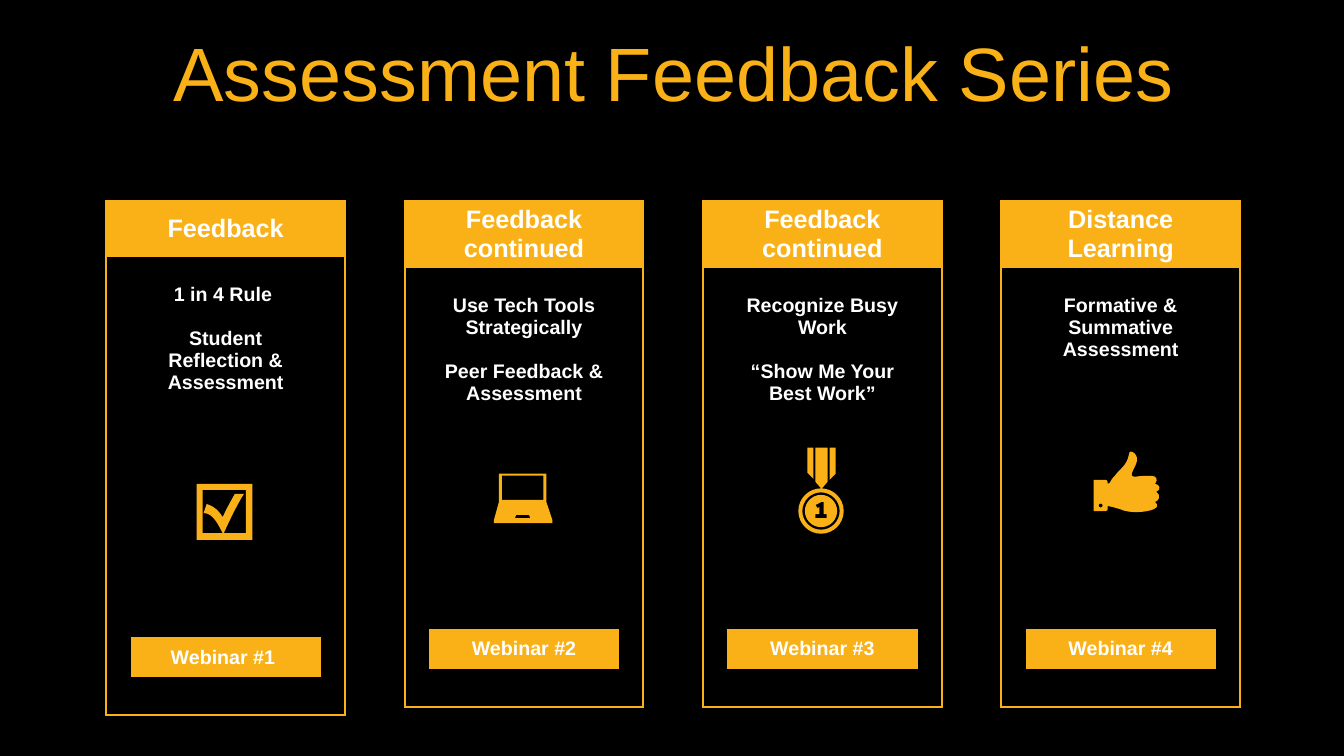
"""Build the Assessment Feedback Series slide with four webinar cards."""
from lxml import etree
from pptx import Presentation
from pptx.dml.color import RGBColor
from pptx.enum.text import MSO_ANCHOR, PP_ALIGN
from pptx.oxml.ns import qn
from pptx.util import Pt

CENTER = PP_ALIGN.CENTER
TOP, MIDDLE = MSO_ANCHOR.TOP, MSO_ANCHOR.MIDDLE

COLORS = {"back": "000000", "gold": "FAB117", "text": "FFFFFF"}
FONT = "Arial"
TITLE = "Assessment Feedback Series"


def circle(cx, cy, r):
    """Return a circle as a start point and four curves."""
    k = 0.55 * r
    return [(cx, cy - r),
            (cx + k, cy - r, cx + r, cy - k, cx + r, cy),
            (cx + r, cy + k, cx + k, cy + r, cx, cy + r),
            (cx - k, cy + r, cx - r, cy + k, cx - r, cy),
            (cx - r, cy - k, cx - k, cy - r, cx, cy - r)]


# Outlines in hundredths of an inch: pairs are lines, sextuples are curves.
CHECKBOX = [
    [(6, 6), (6, 49), (26, 49), (22, 42, 17, 29, 7, 29), (10, 20),
     (19, 23, 22, 27, 26, 33), (30, 24, 33, 19, 38, 10), (47, 10),
     (40, 21, 33, 36, 27, 49), (49, 49), (49, 6)],
    [(0, 0), (55.5, 0), (55.5, 55.5), (0, 55.5)],
]
LAPTOP = [
    [(22, 41), (21, 44), (36, 44), (35, 41)],
    [(8, 2), (8, 26), (49, 26), (49, 2)],
    [(5, 0), (52, 0), (52, 28), (58, 46), (58, 49), (0, 49), (0, 46), (5, 28)],
]
MEDAL = [
    [(25, 54), (23, 54), (17, 57), (19, 60), (21, 59), (21, 66), (17, 66),
     (17, 70), (28, 70), (28, 66), (25, 66)],
    circle(22.5, 63, 16), circle(22.5, 63, 18.5), circle(22.5, 63, 22.5),
    [(31, 0), (37, 0), (37, 26), (31, 32)],
    [(17, 0), (29, 0), (29, 34), (23, 41), (17, 34)],
    [(9, 0), (15, 0), (15, 31), (9, 25)],
]
THUMB = [
    circle(7, 53.5, 2),
    [(37, 0), (39, 0, 42, 2, 43, 6), (45, 13, 32, 25, 41, 25),
     (47, 24, 51, 24, 57, 24), (63, 24, 64, 28, 61, 32),
     (65, 32, 68, 38, 62, 40), (68, 44, 64, 49, 61, 50),
     (64, 53, 64, 55, 60, 57), (54, 60, 36, 62, 26, 57),
     (21, 56, 18, 54, 14, 54), (14, 57), (14, 58, 13, 59, 12, 59), (0, 59),
     (0, 28), (12, 28), (13, 28, 14, 29, 14, 31), (14, 32),
     (15, 32, 15, 32, 16, 31), (17, 29, 18, 27, 21, 24),
     (26, 17, 33, 14, 35, 3), (35, 1, 36, 0, 37, 0)],
]

FIRST_ROWS = (40, 102, 60, 83, 27, 28.6, 27)
OTHER_ROWS = (48, 101.5, 60, 69.6, 27, 28.6, 27)
CARDS = [
    ("Feedback", ["1 in 4 Rule ", "Student Reflection & Assessment"],
     "Webinar #1 ", FIRST_ROWS, CHECKBOX, (140.4, 345.6)),
    ("Feedback continued",
     ["Use Tech Tools Strategically", "Peer Feedback & Assessment"],
     "Webinar #2", OTHER_ROWS, LAPTOP, (352.8, 338.4)),
    ("Feedback continued",
     ["Recognize Busy Work", "“Show Me Your Best Work”"],
     "Webinar #3", OTHER_ROWS, MEDAL, (570.24, 319.7)),
    ("Distance Learning", ["Formative & Summative Assessment"],
     "Webinar #4", OTHER_ROWS, THUMB, (781.2, 322.6)),
]
COLUMNS = (17.2, 136, 17.2)
CARD_LEFT, CARD_TOP, CARD_PITCH = 76, 143.3, 213.1
HEADER_ROW, BODY_ROW, WEBINAR_ROW = 0, 1, 5
LINE_GAP = 16


def rgb(name):
    return RGBColor.from_string(COLORS[name])


def set_borders(cell, sides):
    tcPr = cell._tc.get_or_add_tcPr()
    for i, side in enumerate("LRTB"):
        ln = etree.Element(qn(f"a:ln{side}"), w=str(Pt(1.5)))
        if side in sides:
            fill = etree.SubElement(ln, qn("a:solidFill"))
            etree.SubElement(fill, qn("a:srgbClr"), val=COLORS["gold"])
        else:
            etree.SubElement(ln, qn("a:noFill"))
        tcPr.insert(i, ln)


def write_cell(cell, lines, size, anchor=MIDDLE):
    cell.vertical_anchor = anchor
    tf = cell.text_frame
    tf.text = "\n".join(lines)
    for i, p in enumerate(tf.paragraphs):
        p.alignment = CENTER
        p.font.size, p.font.bold, p.font.name = Pt(size), True, FONT
        p.font.color.rgb = rgb("text")
        if i:
            p.space_before = Pt(LINE_GAP)


def add_card(s, left, heading, topics, label, heights):
    last_row, last_col = len(heights) - 1, len(COLUMNS) - 1
    table = s.shapes.add_table(
        len(heights), len(COLUMNS), Pt(left), Pt(CARD_TOP),
        Pt(sum(COLUMNS)), Pt(sum(heights))).table
    table.first_row = table.horz_banding = False
    for column, width in zip(table.columns, COLUMNS):
        column.width = Pt(width)
    texts = {HEADER_ROW: ([heading], 18), BODY_ROW: (topics, 14, TOP),
             WEBINAR_ROW: ([label], 14)}
    for r, height in enumerate(heights):
        table.rows[r].height = Pt(height)
        for c in range(len(COLUMNS)):
            cell = table.cell(r, c)
            write_cell(cell, *(texts.get(r, ([], 14)) if c == 1 else ([], 14)))
            if r == HEADER_ROW or (r == WEBINAR_ROW and c == 1):
                cell.fill.solid()
                cell.fill.fore_color.rgb = rgb("gold")
            else:
                cell.fill.background()
            edges = {"L": c == 0, "R": c == last_col, "T": r == 0, "B": r == last_row}
            set_borders(cell, [side for side, outer in edges.items() if outer])
    table.cell(BODY_ROW, 1).margin_top = Pt(3 + LINE_GAP)
    table.cell(2, 1).merge(table.cell(3, 1))


def add_icon(s, contours, left, top):
    outlines = [[tuple(round(v * 10) for v in item) for item in contour]
                for contour in contours]
    builder = s.shapes.build_freeform(*outlines[0][0], scale=Pt(0.072))
    for i, outline in enumerate(outlines):
        if i:
            builder.move_to(*outline[0])
        builder.add_line_segments([item[-2:] for item in outline[1:]], close=True)
    sp = builder.convert_to_shape(Pt(left), Pt(top))
    segments = [item for outline in outlines for item in outline[1:]]
    for line, item in zip(list(sp._element.iter(qn("a:lnTo"))), segments):
        if len(item) == 6:
            curve = etree.Element(qn("a:cubicBezTo"))
            for x, y in zip(item[::2], item[1::2]):
                etree.SubElement(curve, qn("a:pt"), x=str(x), y=str(y))
            line.getparent().replace(line, curve)
    sp.shadow.inherit = False
    sp.fill.solid()
    sp.fill.fore_color.rgb = rgb("gold")
    sp.line.fill.background()


def main():
    prs = Presentation()
    prs.slide_width, prs.slide_height = Pt(960), Pt(540)
    s = prs.slides.add_slide(prs.slide_layouts[5])
    s.background.fill.solid()
    s.background.fill.fore_color.rgb = rgb("back")

    title = s.shapes.title
    title.left, title.top, title.width, title.height = Pt(25.3), Pt(26.5), Pt(911.5), Pt(57)
    tf = title.text_frame
    tf.text = TITLE
    tf.vertical_anchor = MIDDLE
    p = tf.paragraphs[0]
    p.alignment, p.line_spacing = CENTER, 0.9
    p.font.size, p.font.name = Pt(54), FONT
    p.font.color.rgb = rgb("gold")

    for i, (heading, topics, label, heights, icon, position) in enumerate(CARDS):
        add_card(s, CARD_LEFT + i * CARD_PITCH, heading, topics, label, heights)
        add_icon(s, icon, *position)
    prs.save("out.pptx")


if __name__ == "__main__":
    main()
